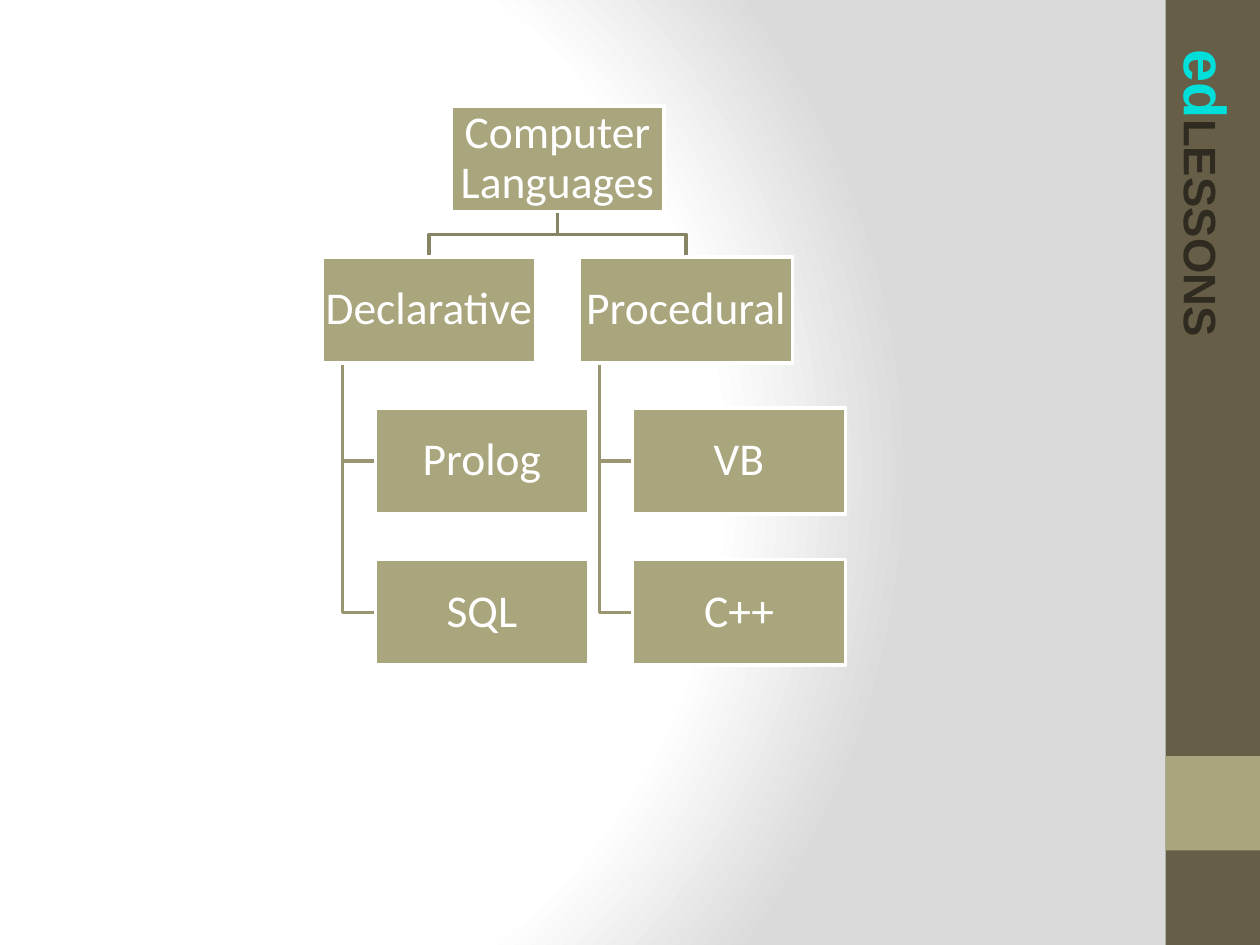
from dataclasses import dataclass

from pptx import Presentation
from pptx.dml.color import RGBColor
from pptx.enum.shapes import MSO_SHAPE
from pptx.enum.text import MSO_ANCHOR, PP_ALIGN
from pptx.oxml import parse_xml
from pptx.oxml.ns import nsdecls, qn
from pptx.util import Inches, Pt


@dataclass(frozen=True)
class Theme:
    paper: str = "FFFFFF"
    shade: str = "DADADA"
    band: str = "675E47"
    box: str = "A9A57C"
    trunk: str = "878463"
    branch: str = "999671"
    accent: str = "00DFDA"
    ink: str = "2F2B20"
    line_width: float = 2
    label_size: int = 26
    accent_size: int = 34
    label_font: str = "Calibri"
    title_font: str = "Arial"


THEME = Theme()
BOX_WIDTH, BOX_HEIGHT = 1.69, 0.84
TREE_LEFT, TREE_TOP = 2.56, 0.84
COLUMN_STEP, ROW_STEP = 2.04, 1.2
LEAF_INDENT, SPINE_INDENT = 0.42, 0.16
ROOT = "Computer Languages"
FAMILIES = {"Declarative": ["Prolog", "SQL"], "Procedural": ["VB", "C++"]}


def color(value):
    return RGBColor.from_string(value)


def set_background(slide):
    slide.background.fill.solid()
    properties = slide.element.find(".//" + qn("p:bgPr"))
    stops = "".join(
        f'<a:gs pos="{position}000"><a:srgbClr val="{value}"/></a:gs>'
        for position, value in ((0, THEME.paper), (75, THEME.paper), (100, THEME.shade))
    )
    gradient = parse_xml(
        f'<a:gradFill {nsdecls("a")} rotWithShape="1"><a:gsLst>{stops}</a:gsLst>'
        '<a:path path="circle"><a:fillToRect l="20000" t="50000" r="100000" b="50000"/>'
        "</a:path></a:gradFill>"
    )
    properties.replace(properties[0], gradient)


def add_block(slide, left, top, width, height, fill):
    block = slide.shapes.add_shape(
        MSO_SHAPE.RECTANGLE, Inches(left), Inches(top), Inches(width), Inches(height)
    )
    block.shadow.inherit = False
    block.fill.solid()
    block.fill.fore_color.rgb = color(fill)
    block.line.fill.background()
    return block


def set_frame(frame, inset):
    frame.word_wrap = True
    frame.vertical_anchor = MSO_ANCHOR.MIDDLE
    frame.margin_left = frame.margin_right = Inches(inset)
    frame.margin_top = frame.margin_bottom = Inches(inset)


def add_run(paragraph, text, font, size, value, bold=False):
    run = paragraph.add_run()
    run.text = text
    run.font.name = font
    run.font.size = Pt(size)
    run.font.bold = bold
    run.font.color.rgb = color(value)


def add_node(slide, left, top, label):
    node = add_block(slide, left, top, BOX_WIDTH, BOX_HEIGHT, THEME.box)
    node.line.color.rgb = color(THEME.paper)
    node.line.width = Pt(THEME.line_width)
    set_frame(node.text_frame, 0.02)
    paragraph = node.text_frame.paragraphs[0]
    paragraph.alignment = PP_ALIGN.CENTER
    paragraph.line_spacing = 0.9
    add_run(paragraph, label, THEME.label_font, THEME.label_size, THEME.paper)


def add_elbow(slide, points, value):
    start, *corners = [(Inches(x), Inches(y)) for x, y in points]
    builder = slide.shapes.build_freeform(*start)
    builder.add_line_segments(corners, close=False)
    elbow = builder.convert_to_shape()
    elbow.shadow.inherit = False
    elbow.fill.background()
    elbow.line.color.rgb = color(value)
    elbow.line.width = Pt(THEME.line_width)


def add_sidebar(slide):
    add_block(slide, 9.25, 0, 0.75, 7.5, THEME.band)
    add_block(slide, 9.25, 6, 0.75, 0.75, THEME.box)
    title = slide.shapes.add_textbox(Inches(8.14), Inches(1.52), Inches(2.89), Inches(0.64))
    title.rotation = 90
    set_frame(title.text_frame, 0)
    paragraph = title.text_frame.paragraphs[0]
    add_run(paragraph, "ed", THEME.title_font, THEME.accent_size, THEME.accent, True)
    add_run(paragraph, "LESSONS", THEME.title_font, THEME.label_size, THEME.ink, True)


def add_tree(slide):
    root_left = TREE_LEFT + COLUMN_STEP * (len(FAMILIES) - 1) / 2
    root_center = root_left + BOX_WIDTH / 2
    root_bottom = TREE_TOP + BOX_HEIGHT
    family_top = TREE_TOP + ROW_STEP
    family_bottom = family_top + BOX_HEIGHT
    fork = (root_bottom + family_top) / 2
    nodes = [(root_left, TREE_TOP, ROOT)]

    for column, (family, languages) in enumerate(FAMILIES.items()):
        left = TREE_LEFT + column * COLUMN_STEP
        center = left + BOX_WIDTH / 2
        spine = left + SPINE_INDENT
        leaf_left = left + LEAF_INDENT
        nodes.append((left, family_top, family))
        add_elbow(
            slide,
            [(root_center, root_bottom), (root_center, fork), (center, fork), (center, family_top)],
            THEME.trunk,
        )
        for row, language in enumerate(languages, start=1):
            top = family_top + row * ROW_STEP
            middle = top + BOX_HEIGHT / 2
            nodes.append((leaf_left, top, language))
            add_elbow(
                slide,
                [(spine, family_bottom), (spine, middle), (leaf_left, middle)],
                THEME.branch,
            )

    for left, top, label in nodes:
        add_node(slide, left, top, label)


def main():
    presentation = Presentation()
    presentation.slide_width = Inches(10)
    presentation.slide_height = Inches(7.5)
    slide = presentation.slides.add_slide(presentation.slide_layouts[6])
    set_background(slide)
    add_sidebar(slide)
    add_tree(slide)
    presentation.save("out.pptx")


if __name__ == "__main__":
    main()
